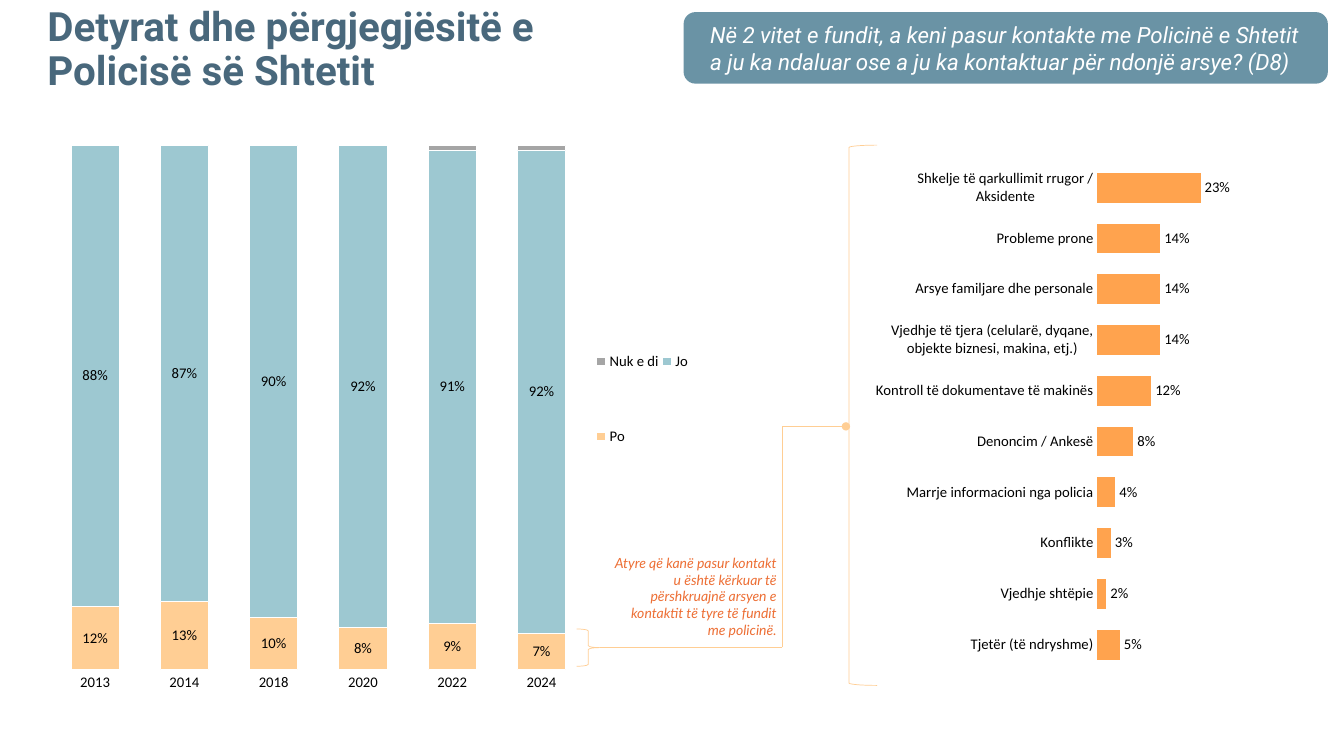
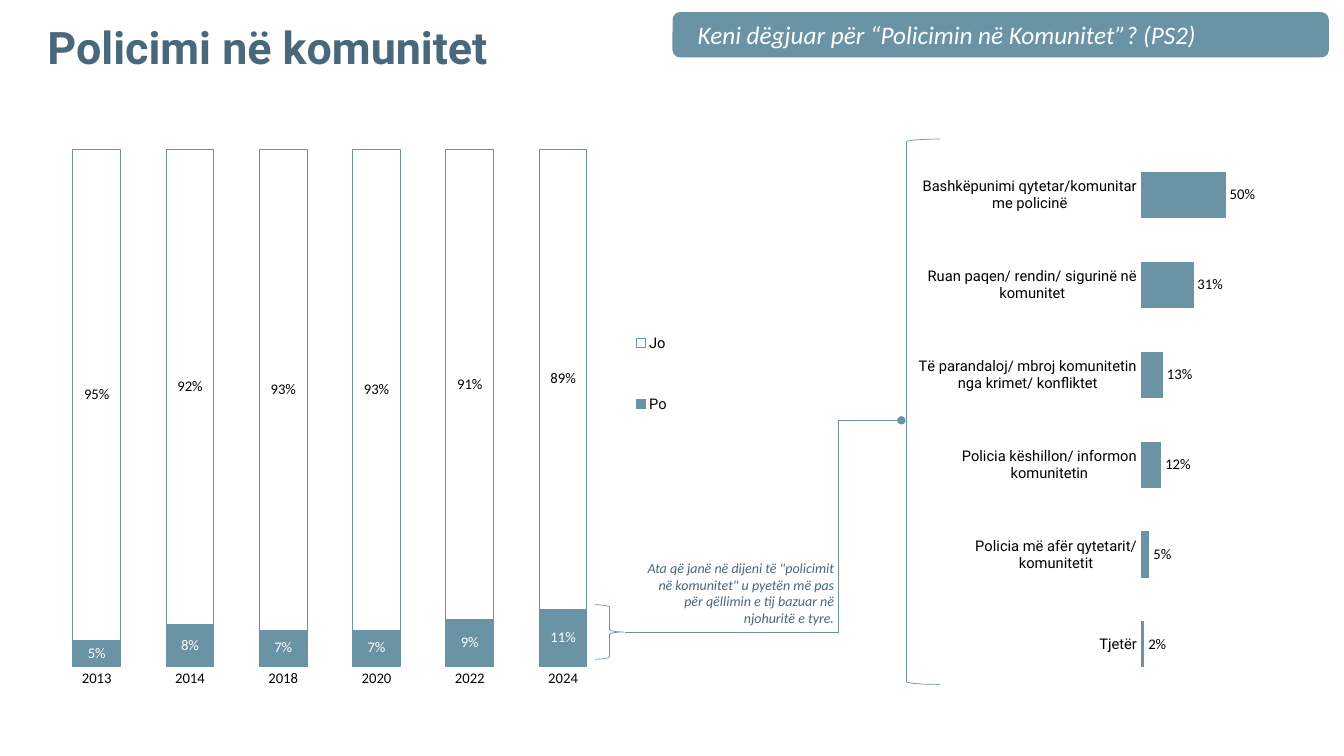
from lxml.etree import SubElement
from pptx import Presentation
from pptx.chart.data import CategoryChartData
from pptx.dml.color import RGBColor
from pptx.enum.chart import XL_CHART_TYPE, XL_LEGEND_POSITION, XL_TICK_MARK
from pptx.enum.shapes import MSO_CONNECTOR, MSO_SHAPE
from pptx.enum.text import MSO_ANCHOR, PP_ALIGN
from pptx.oxml import parse_xml
from pptx.oxml.ns import nsdecls, qn
from pptx.util import Pt

PX = 9144  # 100 px to the inch
COLORS = {
    "navy": "49687C", "steel": "6A93A5", "aqua": "9DC8D1", "peach": "FFCE94",
    "orange": "FFA34E", "rust": "ED6F35", "gray": "A5A5A5",
    "white": "FFFFFF", "black": "000000",
}
YEARS = ["2013", "2014", "2018", "2020", "2022", "2024"]

# Boxes are (left, top, width, height); layouts are fractions of the chart.
# Stacked series are (name, values, fill, outline, label colour).
SLIDES = [
    {
        "title": ("Detyrat dhe përgjegjësitë e Policisë së Shtetit", (37, 11, 641, 78), 28.8),
        "question": ("Në 2 vitet e fundit, a keni pasur kontakte me Policinë e Shtetit "
                     "a ju ka ndaluar ose a ju ka kontaktuar për ndonjë arsye? (D8)",
                     (678, 12, 639, 71), 16, "Roboto"),
        "trend": {
            "box": (37, 127, 656, 572), "gap": 85, "legend_font": "Calibri",
            "plot": (0.02, 0.03, 0.81, 0.91), "legend": (0.84, 0.29, 0.15, 0.36),
            "series": [
                ("Po", [0.12, 0.13, 0.10, 0.08, 0.09, 0.07], "peach", "white", "black"),
                ("Jo", [0.88, 0.87, 0.90, 0.92, 0.91, 0.92], "aqua", "white", "black"),
                ("Nuk e di", [0, 0, 0, 0, 0.01, 0.01], "gray", "white", None),
            ],
        },
        "reasons": {
            "box": (857, 145, 454, 536), "gap": 70, "max": 0.5, "color": "orange",
            "font": "Calibri", "plot": (0.51, 0.03, 0.49, 0.94),
            "rows": [
                ("Shkelje të qarkullimit rrugor / Aksidente", 0.23),
                ("Probleme prone", 0.14),
                ("Arsye familjare dhe personale", 0.14),
                ("Vjedhje të tjera (celularë, dyqane, objekte biznesi, makina, etj.)", 0.14),
                ("Kontroll të dokumentave të makinës", 0.12),
                ("Denoncim / Ankesë", 0.08),
                ("Marrje informacioni nga policia", 0.04),
                ("Konflikte", 0.03),
                ("Vjedhje shtëpie", 0.02),
                ("Tjetër (të ndryshme)", 0.05),
            ],
        },
        "link": {"color": "peach", "brace": (572, 624, 23, 37),
                 "bracket": (842, 144, 28, 536),
                 "points": [(839, 423), (776, 423), (776, 642), (595, 642)]},
        "note": ("Atyre që kanë pasur kontakt u është kërkuar të përshkruajnë arsyen e "
                 "kontaktit të tyre të fundit me policinë.",
                 (598, 545, 182, 94), "Lato", "rust"),
    },
    {
        "title": ("Policimi në komunitet", (37, 11, 734, 78), 32),
        "question": ("Keni dëgjuar për “Policimin në Komunitet”? (PS2)",
                     (667, 12, 651, 45), 18, "Calibri"),
        "trend": {
            "box": (37, 131, 638, 564), "gap": 95, "legend_font": "Roboto",
            "plot": (0.02, 0.03, 0.87, 0.91), "legend": (0.92, 0.28, 0.07, 0.29),
            "series": [
                ("Po", [0.05, 0.08, 0.07, 0.07, 0.09, 0.11], "steel", "steel", "white"),
                ("Jo", [0.95, 0.92, 0.93, 0.93, 0.91, 0.89], None, "steel", "black"),
            ],
        },
        "reasons": {
            "box": (903, 138, 405, 557), "gap": 95, "max": 1, "color": "steel",
            "font": "Roboto", "plot": None,
            "rows": [
                ("Bashkëpunimi qytetar/komunitar me policinë", 0.50),
                ("Ruan paqen/ rendin/ sigurinë në komunitet", 0.31),
                ("Të parandaloj/ mbroj komunitetin nga krimet/ konfliktet", 0.13),
                ("Policia këshillon/ informon komunitetin", 0.12),
                ("Policia më afër qytetarit/ komunitetit", 0.05),
                ("Tjetër", 0.02),
            ],
        },
        "link": {"color": "steel", "brace": (590, 600, 29, 54),
                 "bracket": (899, 138, 33, 541),
                 "points": [(894, 417), (832, 417), (832, 627), (620, 627)]},
        "note": ("Ata që janë në dijeni të \"policimit në komunitet\" u pyetën më pas "
                 "për qëllimin e tij bazuar në njohuritë e tyre.",
                 (624, 550, 213, 77), "Calibri", "navy"),
    },
]


def px(values):
    return [v * PX for v in values]


def rgb(name):
    return RGBColor.from_string(COLORS[name])


def set_font(font, color="black", **values):
    for key, value in values.items():
        setattr(font, key, value)
    font.color.rgb = rgb(color)


def chart_font(font, color="black", name="Calibri"):
    set_font(font, color, name=name, size=Pt(10.5))


def write(tf, text, **values):
    tf.word_wrap = True
    p = tf.paragraphs[0]
    r = p.add_run()
    r.text = text
    set_font(r.font, **values)
    return p


def paint(fmt, fill=None, line=None, width=0.75):
    for part, color in ((fmt.fill, fill), (fmt.line.fill, line)):
        if color:
            part.solid()
            part.fore_color.rgb = rgb(color)
        else:
            part.background()
    if line:
        fmt.line.width = Pt(width)


def add_shape(s, kind, box, fill=None, line=None):
    sp = s.shapes.add_shape(kind, *px(box))
    sp.shadow.inherit = False
    paint(sp, fill, line, 0.5)
    return sp


def set_layout(parent, index, fractions, inner=False):
    for old in parent.findall(qn("c:layout")):
        parent.remove(old)
    target = '<c:layoutTarget val="inner"/>' if inner else ""
    modes = '<c:xMode val="edge"/><c:yMode val="edge"/>'
    sizes = "".join(f'<c:{k} val="{v}"/>' for k, v in zip("xywh", fractions))
    parent.insert(index, parse_xml(
        f'<c:layout {nsdecls("c")}><c:manualLayout>{target}{modes}{sizes}'
        '</c:manualLayout></c:layout>'))


def add_bars(s, kind, spec, cats, series, cat_font, number_format):
    """Draw a bar chart with bare axes; series as in the stacked lists."""
    data = CategoryChartData(number_format="0%")
    data.categories = cats
    for name, values, *_ in series:
        data.add_series(name, values)
    chart = s.shapes.add_chart(kind, *px(spec["box"]), data).chart
    chart.has_title = chart.has_legend = False
    chart_font(chart.font)
    cat, val = chart.category_axis, chart.value_axis
    cat.major_tick_mark = cat.minor_tick_mark = XL_TICK_MARK.NONE
    cat.format.line.fill.background()
    chart_font(cat.tick_labels.font, name=cat_font)
    val.has_major_gridlines = val.visible = False
    val.minimum_scale, val.maximum_scale = 0, spec.get("max", 1)
    plot = chart.plots[0]
    plot.gap_width, plot.vary_by_categories = spec["gap"], False
    for ser, (_, _, fill, line, label) in zip(plot.series, series):
        ser.invert_if_negative = False
        paint(ser.format, fill, line)
        if label:
            labels = ser.data_labels
            labels.show_value = True
            labels.number_format = number_format
            labels.number_format_is_linked = False
            chart_font(labels.font, label)
    if spec["plot"]:
        set_layout(chart.element.find(".//" + qn("c:plotArea")), 0, spec["plot"], True)
    return chart


def add_trend(s, spec):
    chart = add_bars(s, XL_CHART_TYPE.COLUMN_STACKED_100, spec, YEARS,
                     spec["series"], "Calibri", "0%")
    chart.plots[0].overlap = 100
    chart.has_legend = True
    legend = chart.legend
    legend.position = XL_LEGEND_POSITION.RIGHT
    legend.include_in_layout = False
    chart_font(legend.font, name=spec["legend_font"])
    set_layout(chart.element.find(".//" + qn("c:legend")), 1, spec["legend"])


def add_reasons(s, spec):
    cats, values = zip(*spec["rows"])
    chart = add_bars(s, XL_CHART_TYPE.BAR_CLUSTERED, spec, cats,
                     [("Series 1", values, spec["color"], None, "black")],
                     spec["font"], "###0%")
    chart.category_axis.reverse_order = True


def add_link(s, link):
    color, points = link["color"], link["points"]
    add_shape(s, MSO_SHAPE.RIGHT_BRACE, link["brace"], line=color)
    add_shape(s, MSO_SHAPE.LEFT_BRACKET, link["bracket"], line=color)
    for i, (start, end) in enumerate(zip(points, points[1:])):
        c = s.shapes.add_connector(MSO_CONNECTOR.STRAIGHT, *px(start + end))
        c.line.color.rgb = rgb(color)
        c.line.width = Pt(0.5)
        if i == 0:
            SubElement(c.line._get_or_add_ln(), qn("a:headEnd"), type="oval")
        SubElement(c._element.spPr, qn("a:effectLst"))


def add_title(s, text, box, size):
    sp = s.shapes.title
    sp.left, sp.top, sp.width, sp.height = px(box)
    sp.text_frame.vertical_anchor = MSO_ANCHOR.MIDDLE
    p = write(sp.text_frame, text, color="navy", name="Roboto", size=Pt(size), bold=True)
    p.alignment, p.line_spacing = PP_ALIGN.LEFT, 0.9


def add_question(s, text, box, size, font):
    sp = add_shape(s, MSO_SHAPE.ROUNDED_RECTANGLE, box, fill="steel")
    p = write(sp.text_frame, text, color="white", name=font, size=Pt(size), italic=True)
    p.alignment = PP_ALIGN.LEFT
    p._p.get_or_add_pPr().set("marL", str(13 * PX))


def add_note(s, text, box, font, color):
    tf = s.shapes.add_textbox(*px(box)).text_frame
    p = write(tf, text, color=color, name=font, size=Pt(10), italic=True)
    p.alignment = PP_ALIGN.RIGHT


def main():
    prs = Presentation()
    prs.slide_width, prs.slide_height = px((1333, 750))
    for content in SLIDES:
        s = prs.slides.add_slide(prs.slide_layouts[5])
        add_title(s, *content["title"])
        add_question(s, *content["question"])
        add_trend(s, content["trend"])
        add_reasons(s, content["reasons"])
        add_link(s, content["link"])
        add_note(s, *content["note"])
    prs.save("out.pptx")


if __name__ == "__main__":
    main()
